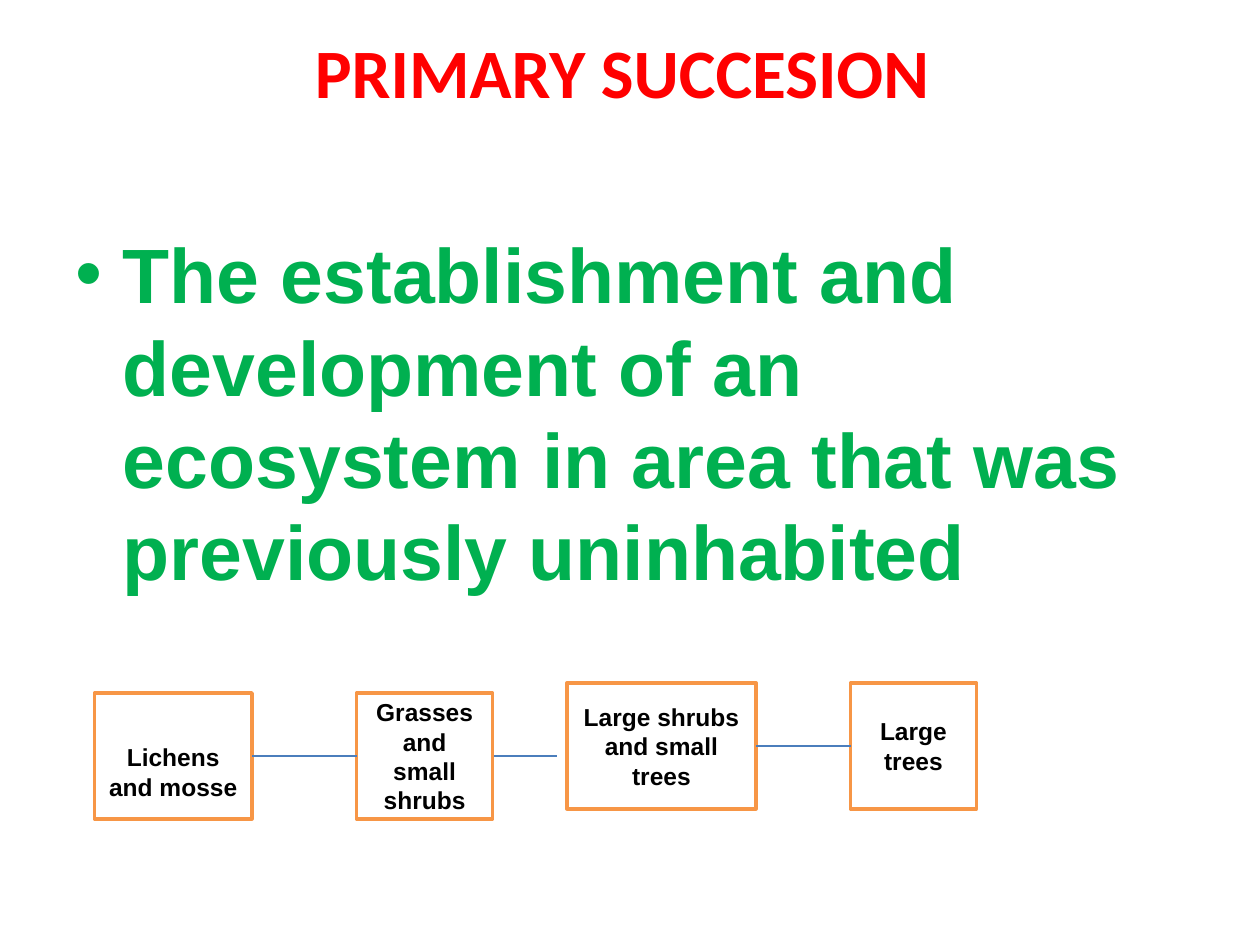
from pptx import Presentation
from pptx.dml.color import RGBColor
from pptx.enum.shapes import MSO_CONNECTOR as Connector, MSO_SHAPE as Shape
from pptx.enum.text import MSO_ANCHOR as Anchor, PP_ALIGN as Align
from pptx.oxml.ns import qn
from pptx.util import Inches, Pt

STAGES = [
    ("Lichens and mosse", 0, 0.08, 1.25, 0.3),
    ("Grasses and small shrubs", 2.08, 0.08, 1.08, 0.05),
    ("Large shrubs and small trees", 3.75, 0, 1.5, 0.05),
    ("Large trees", 6, 0, 1, 0.05),
]
LINKS = [(1.25, 2.08, 0.58), (3.17, 3.67, 0.58), (5.33, 5.92, 0.5), (5.25, 6, 0.5)]
STAGE_HEIGHT = 1


def color(hex_value):
    """Return the colour for a hex string."""
    return RGBColor.from_string(hex_value)


def format_runs(frame, size, font, hex_value):
    """Apply one bold style to every run of a text frame."""
    for paragraph in frame.paragraphs:
        for run in paragraph.runs:
            run.font.size = Pt(size)
            run.font.name = font
            run.font.bold = True
            run.font.color.rgb = color(hex_value)


def fill_placeholder(holder, box, text, size, font, hex_value):
    """Move a placeholder to its box and set its formatted text."""
    holder.left, holder.top, holder.width, holder.height = map(Inches, box)
    holder.text_frame.text = text
    format_runs(holder.text_frame, size, font, hex_value)


def add_stage(slide, left, top, width, label, inset):
    """Add one outlined stage of the succession."""
    stage = slide.shapes.add_shape(
        Shape.RECTANGLE, Inches(left), Inches(top), Inches(width), Inches(STAGE_HEIGHT))
    stage.shadow.inherit = False
    stage.fill.solid()
    stage.fill.fore_color.rgb = color("FFFFFF")
    stage.line.color.rgb = color("F79646")
    stage.line.width = Pt(2)
    frame = stage.text_frame
    frame.word_wrap = True
    frame.vertical_anchor = Anchor.MIDDLE
    frame.margin_top = Inches(inset)
    frame.text = label
    frame.paragraphs[0].alignment = Align.CENTER
    format_runs(frame, 14, "Arial", "000000")


def add_link(slide, start, end, y):
    """Add a thin horizontal line between two stages."""
    link = slide.shapes.add_connector(
        Connector.STRAIGHT, Inches(start), Inches(y), Inches(end), Inches(y))
    link.line.color.rgb = color("4B7EBC")
    link.line.width = Pt(0.75)
    properties = link._element.spPr
    properties.append(properties.makeelement(qn("a:effectLst"), {}))


def add_succession(slide, left, top):
    """Lay out the chain of stages and links from its top left corner."""
    for label, x, y, width, inset in STAGES:
        add_stage(slide, left + x, top + y, width, label, inset)
    for start, end, y in LINKS:
        add_link(slide, left + start, left + end, top + y)


def main():
    """Build and save the slide."""
    deck = Presentation()
    deck.slide_width, deck.slide_height = Inches(10), Inches(7.5)
    slide = deck.slides.add_slide(deck.slide_layouts[1])
    title, definition = slide.placeholders
    fill_placeholder(title, (0.5, 0.3, 9, 1.25), "PRIMARY SUCCESION \v",
                     39.6, "Calibri", "FF0000")
    title.text_frame.vertical_anchor = Anchor.MIDDLE
    fill_placeholder(
        definition, (0.5, 1.75, 9, 4.95),
        "The establishment and development of an ecosystem in area "
        "that was previously uninhabited", 44, "Arial", "00B050")
    add_succession(slide, 0.75, 5.42)
    deck.save("out.pptx")


if __name__ == "__main__":
    main()
